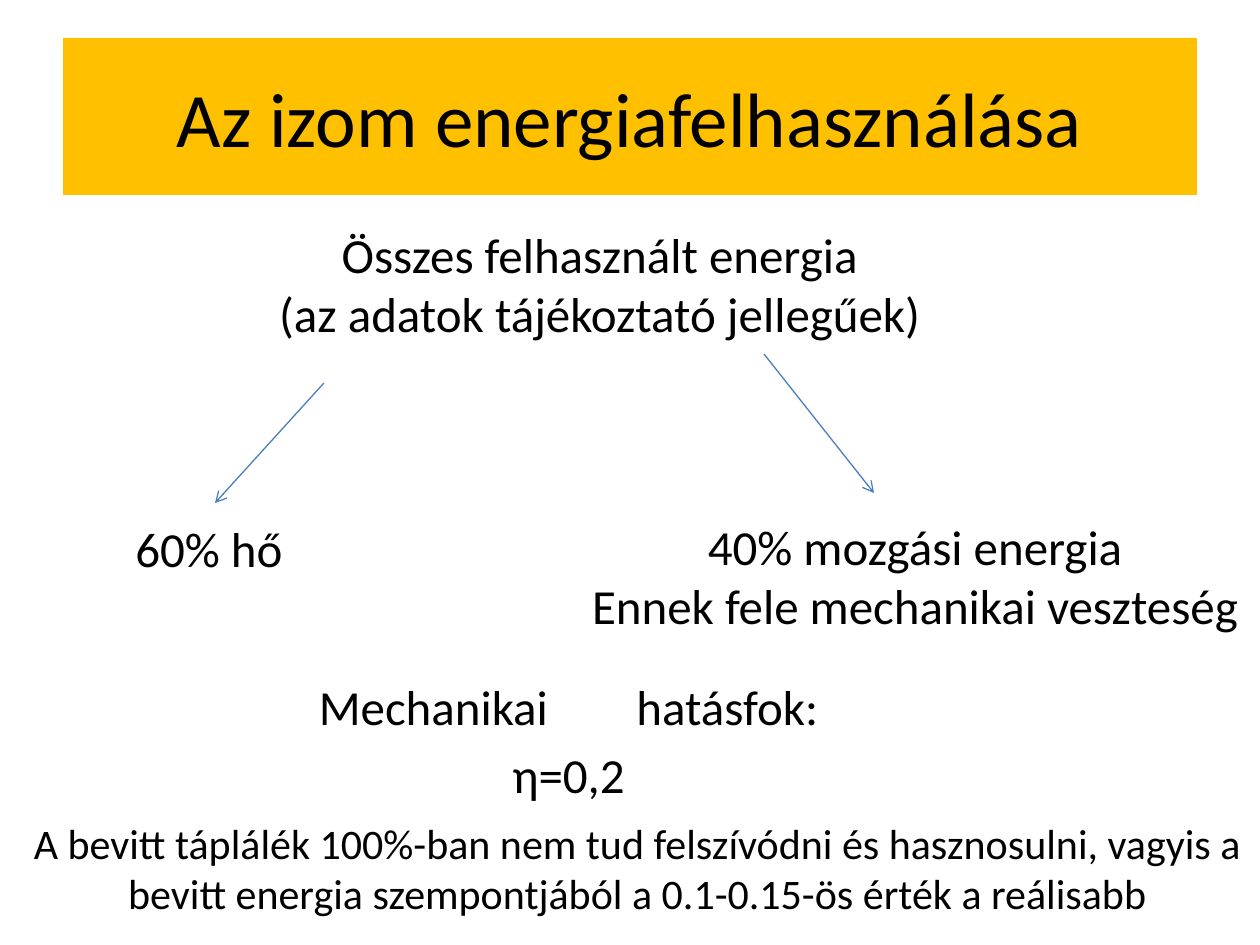
import pptx
import pptx.util
import pptx.dml.color
import pptx.enum.shapes
import pptx.enum.text
import pptx.oxml.ns
from lxml import etree

PX = 914400 / 126
FONT = "Calibri"
BLACK = pptx.dml.color.RGBColor(0x00, 0x00, 0x00)
AMBER = pptx.dml.color.RGBColor(0xFF, 0xC0, 0x00)
BLUE = pptx.dml.color.RGBColor(0x4B, 0x7E, 0xBC)
CENTER = pptx.enum.text.PP_ALIGN.CENTER
LEFT = pptx.enum.text.PP_ALIGN.LEFT
qn = pptx.oxml.ns.qn


def px(n):
    return pptx.util.Emu(round(n * PX))


def place(sp, box):
    sp.left, sp.top, sp.width, sp.height = map(px, box)


def add_run(p, text, size=28, color=BLACK, spacing=None):
    r = p.add_run()
    r.text = text
    r.font.name = FONT
    r.font.size = pptx.util.Pt(size)
    r.font.color.rgb = color
    if spacing:
        r._r.get_or_add_rPr().set("spc", str(spacing))


def write_lines(tf, lines, align=CENTER, **fmt):
    for i, line in enumerate(lines):
        p = tf.add_paragraph() if i else tf.paragraphs[0]
        p.alignment = align
        add_run(p, line, **fmt)


def add_label(s, box, lines, wrap=False, **fmt):
    tf = s.shapes.add_textbox(*map(px, box)).text_frame
    tf.word_wrap = wrap
    tf.auto_size = pptx.enum.text.MSO_AUTO_SIZE.SHAPE_TO_FIT_TEXT
    write_lines(tf, lines, **fmt)


def add_arrow(s, x1, y1, x2, y2):
    line = s.shapes.add_connector(
        pptx.enum.shapes.MSO_CONNECTOR.STRAIGHT, px(x1), px(y1), px(x2), px(y2))
    line.line.color.rgb = BLUE
    line.line.width = pptx.util.Pt(0.75)
    etree.SubElement(line.line._get_or_add_ln(), qn("a:tailEnd"), type="arrow")
    etree.SubElement(line._element.spPr, qn("a:effectLst"))


def build_title(s, box):
    sp = s.shapes.title
    place(sp, box)
    sp.fill.solid()
    sp.fill.fore_color.rgb = AMBER
    sp.text_frame.vertical_anchor = pptx.enum.text.MSO_ANCHOR.MIDDLE
    write_lines(sp.text_frame, ["Az izom energiafelhasználása"], size=44)


def build_efficiency(s, box):
    sp = s.placeholders[1]
    place(sp, box)
    tf = sp.text_frame
    tf.auto_size = pptx.enum.text.MSO_AUTO_SIZE.NONE
    write_lines(tf, ["Mechanikai", "η=0,2"])
    add_run(tf.paragraphs[0], " ", spacing=4430)
    add_run(tf.paragraphs[0], "hatásfok:")
    for p in tf.paragraphs:
        pPr = p._p.get_or_add_pPr()
        pPr.set("marL", "0")
        pPr.set("indent", "0")
        etree.SubElement(pPr, qn("a:buNone"))


def build_energy_split(s, box):
    x, y, w, h = box
    add_label(s, (x + 140, y, 673, 131),
              ["Összes felhasznált energia", "(az adatok tájékoztató jellegűek)"])
    add_arrow(s, x + 201, y + 165, x + 92, y + 285)
    add_label(s, (x, y + 294, 175, 72), ["60% hő"], align=LEFT)
    add_label(s, (x + w - 678, y + h - 131, 678, 131),
              ["40% mozgási energia", "Ennek fele mechanikai veszteség"])
    add_arrow(s, x + 641, y + 136, x + 751, y + 275)


def build_remark(s, box):
    add_label(s, box,
              ["A bevitt táplálék 100%-ban nem tud felszívódni és hasznosulni, "
               "vagyis a bevitt energia szempontjából a 0.1-0.15-ös érték a reálisabb"],
              wrap=True, size=24)


def main():
    prs = pptx.Presentation()
    prs.slide_width, prs.slide_height = px(1260), px(945)
    s = prs.slides.add_slide(prs.slide_layouts[1])
    build_title(s, (63, 38, 1134, 157))
    build_efficiency(s, (251, 670, 635, 103))
    build_energy_split(s, (123, 218, 1131, 423))
    build_remark(s, (15, 811, 1245, 115))
    prs.save("out.pptx")


if __name__ == "__main__":
    main()
